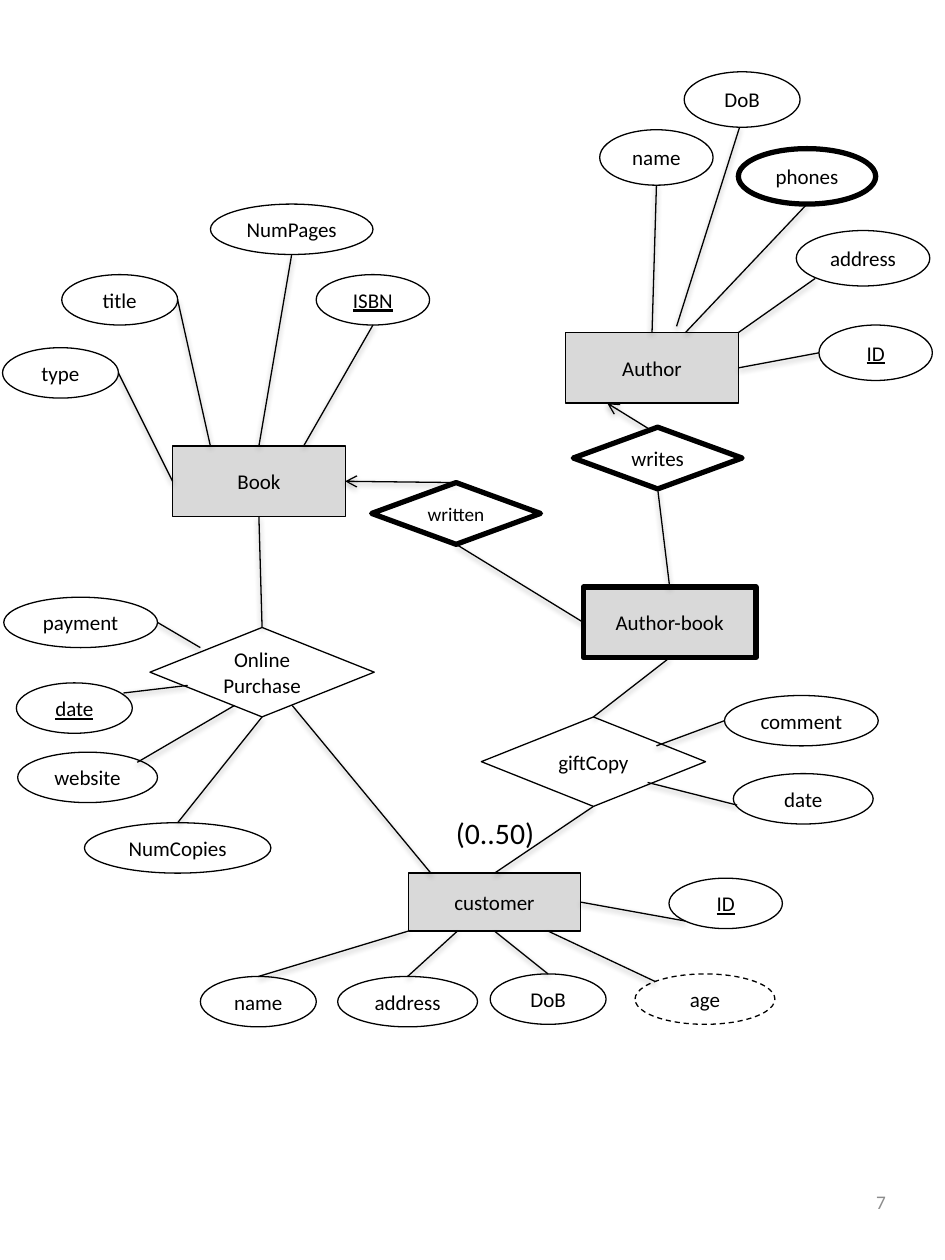
from lxml.etree import SubElement
from pptx import Presentation
from pptx.dml.color import RGBColor
from pptx.enum.dml import MSO_LINE
from pptx.enum.shapes import MSO_CONNECTOR, MSO_SHAPE
from pptx.enum.text import MSO_ANCHOR, PP_ALIGN
from pptx.oxml.ns import qn
from pptx.util import Cm, Pt

TOP, LEFT, BOTTOM, RIGHT = range(4)
THIN, THICK = 0.75, 3


def inch(value):
    """Turn the inches of the diagram grid into a length."""
    return Cm(value * 2.54)


def color(hex_text):
    return RGBColor.from_string(hex_text)


class Diagram:
    """Style and current page of an entity-relationship diagram."""
    font = "Calibri"
    ink = "000000"
    entity_fill = "D9D9D9"

    def __init__(self, page):
        self.page = page
        self.nodes = {}

    def add_text(self, frame, lines, size, align, ink=ink, underline=False):
        for number, line in enumerate(lines):
            para = frame.add_paragraph() if number else frame.paragraphs[0]
            para.alignment = align
            span = para.add_run()
            span.text = line
            span.font.name = self.font
            span.font.size = Pt(size)
            span.font.color.rgb = color(ink)
            if underline:
                span.font.underline = True

    def node(self, kind, key, text, place, weight=THIN, size=12,
             underline=False, fill=None):
        box = self.page.shapes.add_shape(kind, *map(inch, place))
        box.shadow.inherit = False
        if fill:
            box.fill.solid()
            box.fill.fore_color.rgb = color(fill)
        else:
            box.fill.background()
        box.line.color.rgb = color(self.ink)
        box.line.width = Pt(weight)
        frame = box.text_frame
        frame.word_wrap = True
        frame.vertical_anchor = MSO_ANCHOR.MIDDLE
        frame.margin_left = frame.margin_right = 0
        frame.margin_top = frame.margin_bottom = 0
        self.add_text(frame, text.split("\n"), size, PP_ALIGN.CENTER,
                      underline=underline)
        self.nodes[key] = box
        return box

    def entity(self, key, text, x, y, height=0.56, weight=THIN):
        return self.node(MSO_SHAPE.RECTANGLE, key, text,
                         (x, y, 1.37, height), weight, fill=self.entity_fill)

    def relation(self, key, text, place, weight=THIN, size=12):
        return self.node(MSO_SHAPE.DIAMOND, key, text, place, weight, size)

    def attribute(self, key, text, x, y, width, height=0.4, weight=THIN,
                  underline=False):
        return self.node(MSO_SHAPE.OVAL, key, text, (x, y, width, height),
                         weight, underline=underline)

    def locate(self, end):
        """Give the point of an end: (node key, side) or (x, y) in inches."""
        if not isinstance(end[0], str):
            return inch(end[0]), inch(end[1])
        box, side = self.nodes[end[0]], end[1]
        across = {LEFT: 0, RIGHT: box.width}.get(side, box.width // 2)
        down = {TOP: 0, BOTTOM: box.height}.get(side, box.height // 2)
        return box.left + across, box.top + down

    def link(self, start, finish, arrow=False):
        connector = self.page.shapes.add_connector(
            MSO_CONNECTOR.STRAIGHT, *self.locate(start), *self.locate(finish))
        connector.line.color.rgb = color(self.ink)
        connector.line.width = Pt(THIN)
        for end, attach in ((start, connector.begin_connect),
                            (finish, connector.end_connect)):
            box = self.nodes.get(end[0])
            # An oval numbers its connection sites differently.
            if box is not None and box.auto_shape_type != MSO_SHAPE.OVAL:
                attach(box, end[1])
        if arrow:
            outline = connector.element.spPr.find(qn("a:ln"))
            SubElement(outline, qn("a:tailEnd"), type="arrow")

    def label(self, text, place, size, align, ink=ink, wrap=True,
              anchor=MSO_ANCHOR.TOP):
        box = self.page.shapes.add_textbox(*map(inch, place))
        box.text_frame.word_wrap = wrap
        box.text_frame.vertical_anchor = anchor
        self.add_text(box.text_frame, [text], size, align, ink)


def add_nodes(diagram):
    diagram.entity("author", "Author", 4.49, 2.64)
    diagram.entity("book", "Book", 1.37, 3.54)
    diagram.entity("author_book", "Author-book", 4.63, 4.66, weight=THICK)
    diagram.entity("customer", "customer", 3.24, 6.93, height=0.46)

    diagram.relation("writes", "writes", (4.55, 3.39, 1.34, 0.49), THICK)
    diagram.relation("written", "written", (2.95, 3.83, 1.34, 0.49), THICK, 11)
    diagram.relation("purchase", "Online\nPurchase", (1.19, 4.98, 1.78, 0.71))
    diagram.relation("gift", "giftCopy", (3.82, 5.69, 1.78, 0.71))

    for key, text, x, y, width in (
            ("author_dob", "DoB", 5.43, 0.57, 0.92),
            ("author_address", "address", 6.32, 1.83, 1.06),
            ("author_name", "name", 4.76, 1.03, 0.9)):
        diagram.attribute(key, text, x, y, width, 0.44)
    diagram.attribute("phones", "phones", 5.86, 1.18, 1.09, 0.44, THICK)
    diagram.attribute("author_id", "ID", 6.5, 2.58, 0.9, 0.44, underline=True)

    for key, text, x, y, width in (
            ("title", "title", 0.49, 2.18, 0.92),
            ("pages", "NumPages", 1.67, 1.62, 1.29),
            ("type", "type", 0.02, 2.76, 0.92),
            ("customer_name", "name", 1.59, 7.75, 0.92),
            ("customer_address", "address", 2.68, 7.75, 1.11),
            ("customer_dob", "DoB", 3.89, 7.73, 0.92),
            ("payment", "payment", 0.03, 4.74, 1.22),
            ("website", "website", 0.14, 5.97, 1.11),
            ("copies", "NumCopies", 0.67, 6.53, 1.48),
            ("comment", "comment", 5.75, 5.52, 1.22),
            ("gift_date", "date", 5.82, 6.14, 1.11)):
        diagram.attribute(key, text, x, y, width)
    for key, text, x, y, width in (
            ("isbn", "ISBN", 2.51, 2.18, 0.9),
            ("customer_id", "ID", 5.31, 6.97, 0.9),
            ("purchase_date", "date", 0.13, 5.42, 0.92)):
        diagram.attribute(key, text, x, y, width, underline=True)
    age = diagram.attribute("age", "age", 5.04, 7.73, 1.11)
    age.line.dash_style = MSO_LINE.DASH


def add_links(diagram):
    for start, finish in (
            (("author_id", LEFT), ("author", RIGHT)),
            ((6.47, 2.21), (5.86, 2.64)),
            (("phones", BOTTOM), (5.44, 2.64)),
            ((5.87, 1.01), (5.37, 2.59)),
            (("author_name", BOTTOM), ("author", TOP)),
            (("book", LEFT), ("type", RIGHT)),
            (("title", RIGHT), (1.67, 3.54)),
            (("book", TOP), ("pages", BOTTOM)),
            (("isbn", BOTTOM), (2.41, 3.54)),
            (("writes", BOTTOM), ("author_book", TOP)),
            (("written", BOTTOM), ("author_book", LEFT)),
            ((3.24, 7.39), ("customer_name", TOP)),
            ((3.63, 7.39), ("customer_address", TOP)),
            (("customer", BOTTOM), ("customer_dob", TOP)),
            ((4.35, 7.39), (5.2, 7.79)),
            (("customer", RIGHT), (5.44, 7.31)),
            (("purchase", BOTTOM), ("copies", TOP)),
            ((1.59, 5.14), ("payment", RIGHT)),
            ((1.49, 5.44), (0.98, 5.5)),
            ((1.86, 5.6), (1.09, 6.05)),
            ((3.42, 6.93), (2.32, 5.6)),
            (("book", BOTTOM), ("purchase", TOP)),
            (("customer", TOP), ("gift", BOTTOM)),
            (("gift", TOP), ("author_book", BOTTOM)),
            (("comment", LEFT), (5.21, 5.92)),
            ((5.85, 6.39), (5.14, 6.21))):
        diagram.link(start, finish)
    diagram.link((5.16, 3.41), (4.82, 3.2), arrow=True)
    diagram.link(("written", TOP), ("book", RIGHT), arrow=True)


def main():
    deck = Presentation()
    deck.slide_width, deck.slide_height = inch(7.5), inch(10)
    blank_layout = deck.slide_layouts[6]
    diagram = Diagram(deck.slides.add_slide(blank_layout))
    add_nodes(diagram)
    add_links(diagram)
    diagram.label("(0..50)", (3.52, 6.42, 0.83, 0.39), 17, PP_ALIGN.LEFT,
                  wrap=False)
    diagram.label("7", (5.38, 9.27, 1.75, 0.53), 11, PP_ALIGN.RIGHT,
                  ink="8C8C8C", anchor=MSO_ANCHOR.MIDDLE)
    deck.save("out.pptx")


if __name__ == "__main__":
    main()
